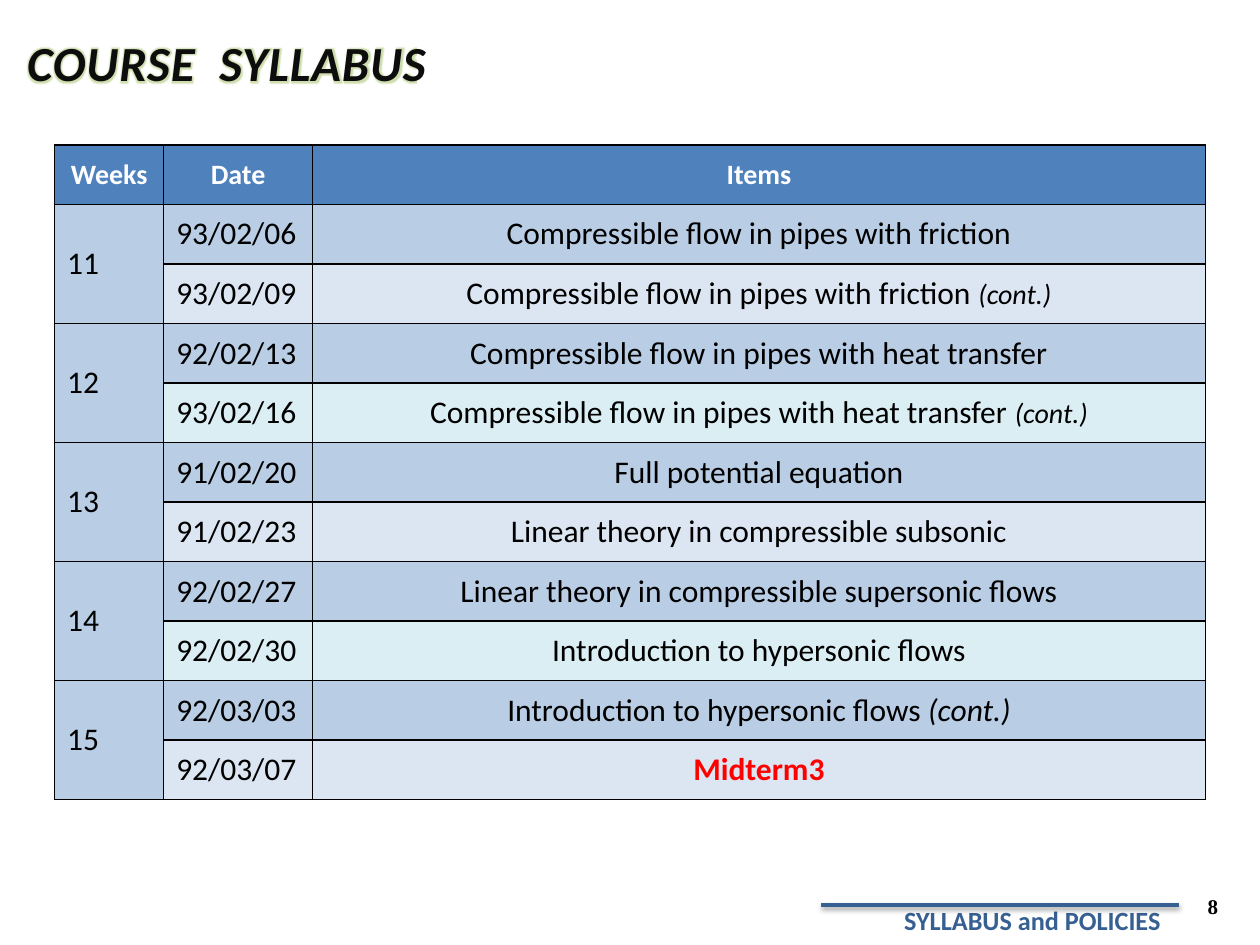
from lxml.etree import SubElement as Sub, Element
from pptx import Presentation
from pptx.dml.color import RGBColor
from pptx.enum.shapes import MSO_CONNECTOR as Link
from pptx.enum.text import MSO_ANCHOR as Anchor, PP_ALIGN as Align
from pptx.oxml.ns import qn
from pptx.util import Cm, Pt

BLACK, WHITE, RED = "000000", "FFFFFF", "FF0000"
HEAD, DEEP, PALE, AQUA, NAVY = "4F81BD", "B9CDE5", "DCE6F2", "DBEEF4", "376092"
FLOW = "Compressible flow in pipes with "
HYPER = "Introduction to hypersonic flows"
CONT = ("(cont.)", {"size": 16, "italic": True})
WEEKS = [
    ("11", PALE, ("93/02/06", [(FLOW + "friction", {})]),
     ("93/02/09", [(FLOW + "friction ", {}), CONT])),
    ("12", AQUA, ("92/02/13", [(FLOW + "heat transfer", {})]),
     ("93/02/16", [(FLOW + "heat transfer ", {}), CONT])),
    ("13", PALE, ("91/02/20", [("Full potential equation", {})]),
     ("91/02/23", [("Linear theory in compressible subsonic", {})])),
    ("14", AQUA, ("92/02/27", [("Linear theory in compressible supersonic flows", {})]),
     ("92/02/30", [(HYPER, {})])),
    ("15", PALE, ("92/03/03", [(HYPER + " ", {}), ("(cont.)", {"italic": True})]),
     ("92/03/07", [("Midterm3", {"color": RED, "bold": True})])),
]


def paint(code):
    return RGBColor.from_string(code)


def effect(kind, code, alpha, **attrs):
    root = Element(qn("a:effectLst"))
    node = Sub(root, qn("a:" + kind), {k: str(v) for k, v in attrs.items()})
    tint = Sub(node, qn("a:srgbClr"), val=code)
    Sub(tint, qn("a:alpha"), val=str(alpha * 1000))
    return root


class Page:
    def __init__(self, slide, font="Calibri", size=18):
        self.slide, self.font, self.size = slide, font, size

    def run(self, para, text, size=None, color=BLACK, bold=False, italic=False, font=None):
        run = para.add_run()
        run.text = text
        run.font.name = font or self.font
        run.font.size = Pt(size or self.size)
        run.font.bold, run.font.italic = bold, italic
        run.font.color.rgb = paint(color)
        return run

    def text(self, box, text, align=Align.LEFT, anchor=Anchor.TOP, **style):
        frame = self.slide.shapes.add_textbox(*map(Cm, box)).text_frame
        frame.word_wrap = True
        frame.vertical_anchor = anchor
        para = frame.paragraphs[0]
        para.alignment = align
        return self.run(para, text, **style)

    def line(self, x, y, end, color, width):
        line = self.slide.shapes.add_connector(Link.STRAIGHT, Cm(x), Cm(y), Cm(end), Cm(y))
        line.line.color.rgb = paint(color)
        line.line.width = Pt(width)
        line._element.spPr.append(effect(
            "outerShdw", BLACK, 38, blurRad=Pt(3.1), dist=Pt(1.6),
            dir=90 * 60000, rotWithShape=0))

    def table(self, box, cols, rows):
        grid = self.slide.shapes.add_table(rows, len(cols), *map(Cm, box)).table
        for col, width in zip(grid.columns, cols):
            col.width = Cm(width)
        for row in grid.rows:
            row.height = Cm(box[3] / rows)
        return grid

    def cell(self, cell, fill, runs=(), align=Align.LEFT):
        cell.vertical_anchor = Anchor.MIDDLE
        para = cell.text_frame.paragraphs[0]
        para.alignment = align
        for text, style in runs:
            self.run(para, text, **style)
        props = cell._tc.get_or_add_tcPr()
        for side in ("lnL", "lnR", "lnT", "lnB"):
            edge = Sub(props, qn("a:" + side), w=str(Pt(1)))
            Sub(Sub(edge, qn("a:solidFill")), qn("a:srgbClr"), val=BLACK)
        cell.fill.solid()
        cell.fill.fore_color.rgb = paint(fill)


def main():
    deck = Presentation()
    deck.slide_width, deck.slide_height = Cm(25.4), Cm(19.05)
    page = Page(deck.slides.add_slide(deck.slide_layouts[6]))

    grid = page.table((1.1, 2.92, 23.2, 13.2), (2.2, 3, 18), 1 + 2 * len(WEEKS))
    bold = {"size": 16, "color": WHITE, "bold": True}
    for col, name in enumerate(("Weeks", "Date", "Items")):
        page.cell(grid.cell(0, col), HEAD, [(name, bold)], Align.CENTER)
    for i, (week, shade, *days) in enumerate(WEEKS):
        top = 1 + 2 * i
        for row, (date, item), fill in zip((top, top + 1), days, (DEEP, shade)):
            page.cell(grid.cell(row, 0), DEEP, [(week, {})] if row == top else ())
            page.cell(grid.cell(row, 1), fill, [(date, {})])
            page.cell(grid.cell(row, 2), fill, item, Align.CENTER)
        grid.cell(top, 0).merge(grid.cell(top + 1, 0))

    title = page.text((0.3, 0.53, 22.2, 1.45), "COURSE  SYLLABUS",
                      size=28, color="0D0D0D", bold=True, italic=True)
    props = title.font._element
    props.set("spc", "50")
    props.find(qn("a:solidFill")).addnext(effect("glow", "9BBB59", 50, rad=Pt(4)))

    page.text((23.75, 17.75, 1.4, 1.02), "8", Align.CENTER, Anchor.MIDDLE,
              size=12, bold=True, font="Times New Roman")
    page.text((14.86, 18.11, 8.79, 0.89), "SYLLABUS and POLICIES", Align.RIGHT,
              size=15, color=NAVY, bold=True)
    page.line(16.56, 18.24, 23.77, NAVY, 2)
    deck.save("out.pptx")


if __name__ == "__main__":
    main()
